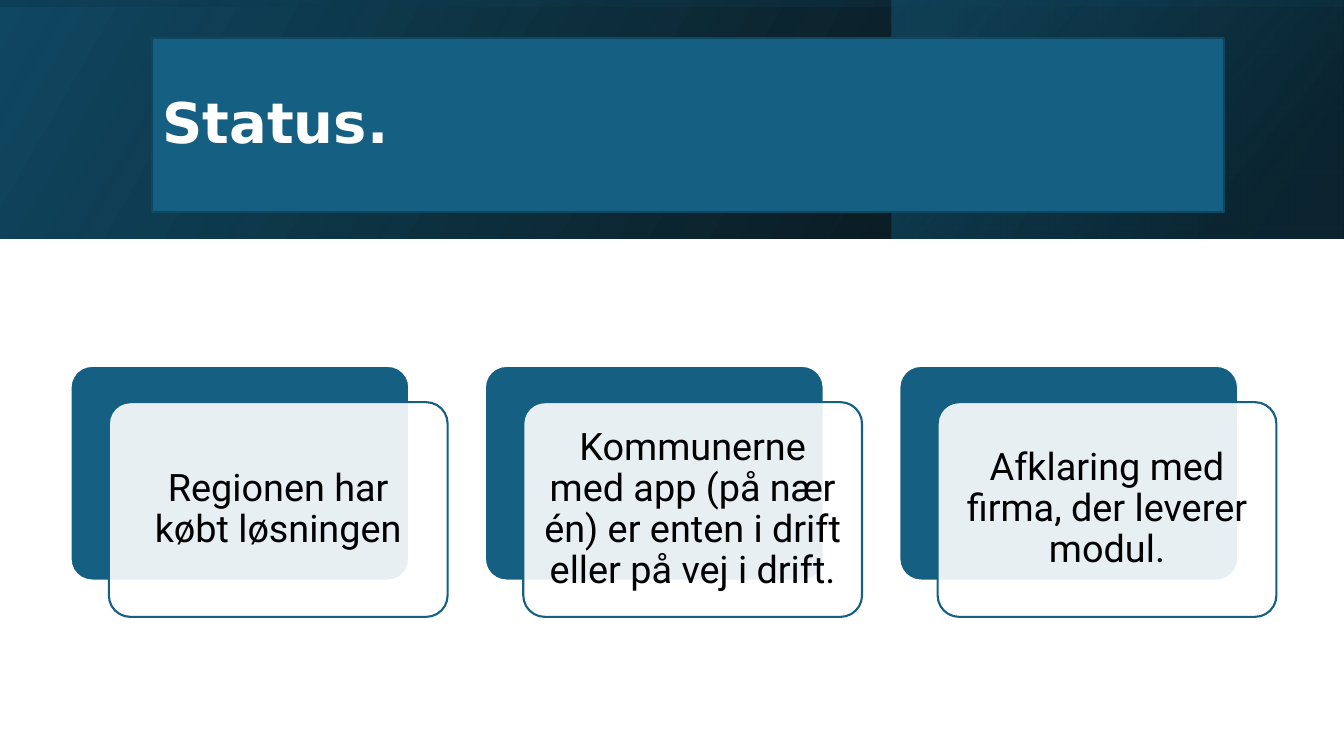
from lxml.etree import SubElement
from pptx import Presentation
from pptx.dml.color import RGBColor
from pptx.enum.shapes import MSO_SHAPE as Shape
from pptx.enum.text import MSO_ANCHOR as Anchor, MSO_AUTO_SIZE as Fit, PP_ALIGN as Align
from pptx.oxml.ns import qn
from pptx.util import Inches, Pt

BLACK = RGBColor(0x00, 0x00, 0x00)
WHITE = RGBColor(0xFF, 0xFF, 0xFF)
BLUE = RGBColor(0x15, 0x60, 0x82)
EDGE = RGBColor(0x10, 0x47, 0x60)
DEEP = RGBColor(0x10, 0x48, 0x62)
NIGHT = RGBColor(0x0B, 0x30, 0x41)

BANDS = [
    ((0, 0, 13.33, 2.37), 0, 330, [(0, BLACK, 96), (100, DEEP, 100)]),
    ((8.84, 0, 4.48, 2.37), 0, 320, [(19, NIGHT, 68), (100, BLUE, 48)]),
    ((5.48, -5.48, 2.37, 13.33), 270, 350, [(23, DEEP, 16), (99, BLACK, 45)]),
]
CARDS = [
    "Regionen har købt løsningen",
    "Kommunerne med app (på nær én) er enten i drift eller på vej i drift.",
    "Afklaring med firma, der leverer modul.",
]


def fade(color, alpha):
    """Set the opacity, in percent, of a solid fill or gradient stop element."""
    tag = next(color.iter(qn("a:srgbClr")))
    SubElement(tag, qn("a:alpha"), val=str(alpha * 1000))


def write(shape, text, size, font, color, align, bold=False, inset=0.1):
    """Fill a shape with one formatted paragraph."""
    frame = shape.text_frame
    frame.word_wrap = True
    frame.auto_size = Fit.NONE
    frame.vertical_anchor = Anchor.MIDDLE
    frame.margin_left = frame.margin_right = Inches(inset)
    frame.margin_top = frame.margin_bottom = Inches(inset)
    para = frame.paragraphs[0]
    para.alignment = align
    para.line_spacing = 0.9
    run = para.add_run()
    run.text = text
    run.font.size = Pt(size)
    run.font.name = font
    run.font.bold = bold
    run.font.color.rgb = color


def paint(shape, fill, line):
    """Give a shape a solid fill and an outline."""
    shape.fill.solid()
    shape.fill.fore_color.rgb = fill
    shape.line.color.rgb = line
    shape.line.width = Pt(1.5)


def add_band(slide, box, turn, angle, stops):
    """Add one mirrored, see-through gradient band."""
    band = slide.shapes.add_shape(Shape.RECTANGLE, *map(Inches, box))
    band.shadow.inherit = False
    band.line.fill.background()
    band.rotation = turn
    band.element.spPr.xfrm.set("flipH", "1")
    band.fill.gradient()
    band.fill.gradient_angle = 360 - angle
    tags = band.element.spPr.iter(qn("a:gs"))
    for stop, tag, (place, color, alpha) in zip(band.fill.gradient_stops, tags, stops):
        stop.position = place / 100
        stop.color.rgb = color
        for old in list(tag[0]):
            tag[0].remove(old)
        fade(tag, alpha)


def add_head(slide, left, top, width, height):
    """Add the header bands and place the title above them."""
    for band in BANDS:
        add_band(slide, *band)
    title = slide.shapes.title
    slide.shapes.element.append(title.element)
    title.left, title.top = Inches(left), Inches(top)
    title.width, title.height = Inches(width), Inches(height)
    paint(title, BLUE, EDGE)
    write(title, "Status.", 40, "DejaVu Sans", WHITE, Align.LEFT, bold=True)


def add_plate(slide, left, top, width, height, fill, line):
    """Add one rounded plate."""
    box = map(Inches, (left, top, width, height))
    plate = slide.shapes.add_shape(Shape.ROUNDED_RECTANGLE, *box)
    plate.shadow.inherit = False
    plate.adjustments[0] = 0.1
    paint(plate, fill, line)
    return plate


def add_card(slide, left, top, width, height, text):
    """Add a blue plate with a shifted white text plate over it."""
    add_plate(slide, left, top, width, height, BLUE, WHITE)
    front = add_plate(slide, left + 0.38, top + 0.36, width, height, WHITE, BLUE)
    fade(front.element.spPr.find(qn("a:solidFill")), 90)
    write(front, text, 27, "Roboto", BLACK, Align.CENTER, inset=0.11)


def add_row(slide, left, top, width, height, gap):
    """Lay out the cards side by side."""
    for col, text in enumerate(CARDS):
        add_card(slide, left + col * (width + gap), top, width, height, text)


def main():
    """Build and save the deck."""
    deck = Presentation()
    deck.slide_width, deck.slide_height = Inches(13.33), Inches(7.5)
    slide = deck.slides.add_slide(deck.slide_layouts[5])
    add_head(slide, 1.51, 0.38, 10.63, 1.72)
    add_row(slide, 0.7, 3.63, 3.36, 2.13, 0.75)
    deck.save("out.pptx")


if __name__ == "__main__":
    main()
